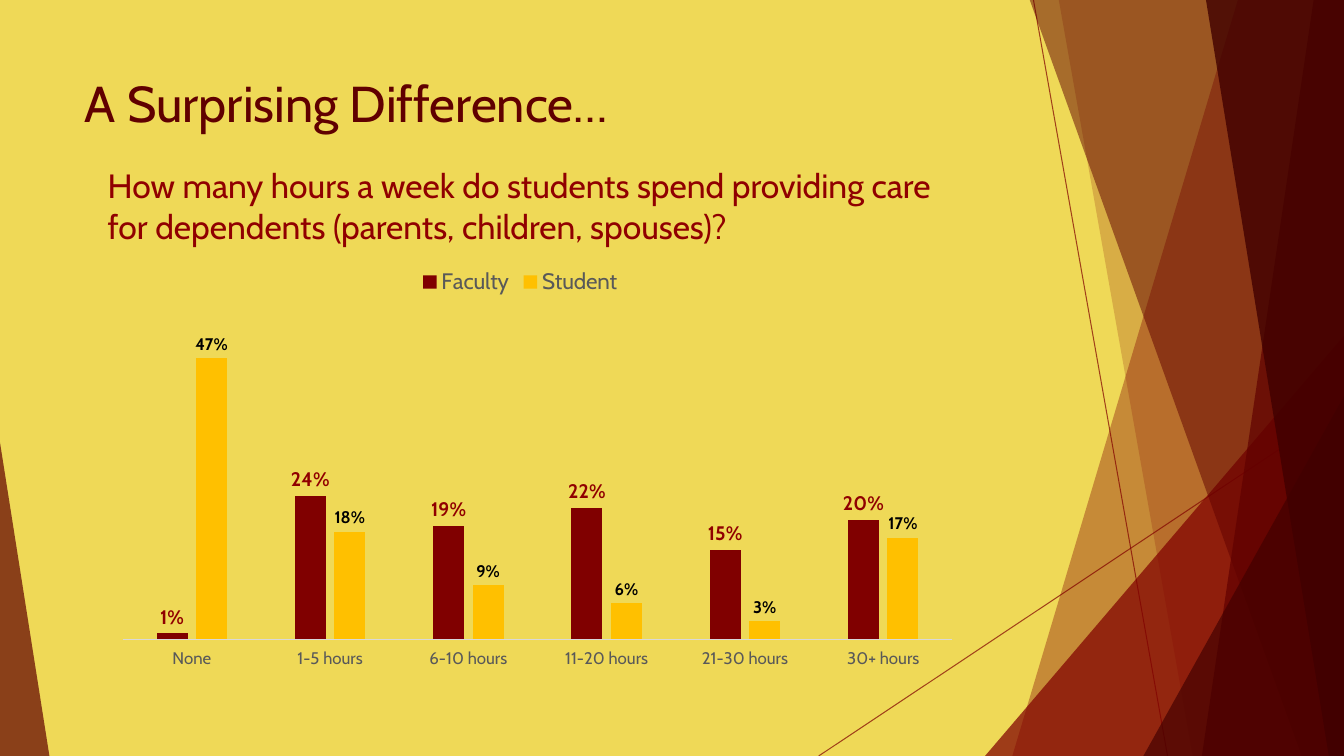
"""Build the slide comparing faculty and student answers on hours of dependent care."""
from dataclasses import dataclass

from lxml.etree import SubElement
from pptx import Presentation
from pptx.chart.data import CategoryChartData
from pptx.dml.color import RGBColor
from pptx.enum.chart import XL_CHART_TYPE as CT, XL_LABEL_POSITION as LABEL
from pptx.enum.chart import XL_LEGEND_POSITION as LEGEND, XL_TICK_LABEL_POSITION as TICK_LABEL
from pptx.enum.chart import XL_TICK_MARK as TICK
from pptx.enum.shapes import MSO_CONNECTOR as CONNECTOR, MSO_SHAPE as SHAPE
from pptx.enum.text import MSO_ANCHOR as ANCHOR, MSO_AUTO_SIZE as AUTO, PP_ALIGN as ALIGN
from pptx.oxml import parse_xml
from pptx.oxml.ns import nsdecls, qn
from pptx.util import Inches, Pt

WIDTH, HEIGHT, TOP = 13.33, 7.5, -0.01
FONT = "Cabin"


@dataclass
class Ray:
    start: tuple[float, float]
    end: tuple[float, float]


@dataclass
class Facet:
    top_x: float
    bottom_x: float
    color: str
    alpha: int


@dataclass
class Corner:
    box: tuple[float, float, float, float]
    apex: float
    color: str
    alpha: int


@dataclass
class Answers:
    name: str
    values: list[float]
    color: str
    label_color: str
    label_size: int


RAYS = [Ray((10.25, 0), (11.58, HEIGHT)), Ray((WIDTH, 4.03), (8.12, HEIGHT))]
PANELS = [
    Facet(12.28, 10.04, "800000", 36),
    Facet(10.5, 11.83, "800000", 20),
    Corner((9.77, 3.33, 3.56, 4.17), 1, "800000", 72),
    Facet(10.21, 12.91, "600000", 50),
    Facet(13.03, 11.92, "600000", 70),
    Facet(11.96, 13.18, "400000", 80),
    Corner((11.34, 3.93, 1.99, 3.57), 1, "400000", 66),
    Corner((0, 4.39, 0.49, 3.11), 0, "600000", 70),
]
HOURS = ["None", "1-5 hours", "6-10 hours", "11-20 hours", "21-30 hours", "30+ hours"]
ANSWERS = [
    Answers("Faculty", [0.01, 0.24, 0.19, 0.22, 0.15, 0.2], "800000", "900000", 14),
    Answers("Student", [0.47, 0.18, 0.09, 0.06, 0.03, 0.17], "FFC000", "000000", 12),
]
PLOT_AREA = {"x": 0.076, "y": 0.172, "w": 0.885, "h": 0.615}


def paint(fmt, color: str, alpha: int = 100) -> None:
    """Give a fill a solid colour with an opacity in percent."""
    fmt.solid()
    fmt.fore_color.rgb = RGBColor.from_string(color)
    if alpha < 100:
        for node in fmt._xPr.iter(qn("a:srgbClr")):
            SubElement(node, qn("a:alpha")).set("val", str(alpha * 1000))


def style_font(font, size: int, color: str, bold: bool = False) -> None:
    """Set the typeface, size, weight and colour of a font."""
    for key, value in {"name": FONT, "size": Pt(size), "bold": bold}.items():
        setattr(font, key, value)
    paint(font.fill, color)


def write(sp, text: str, size: int, color: str, autosize: AUTO) -> None:
    """Put one left-aligned paragraph into a shape."""
    tf = sp.text_frame
    settings = {"word_wrap": True, "auto_size": autosize, "vertical_anchor": ANCHOR.TOP}
    for key, value in settings.items():
        setattr(tf, key, value)
    p = tf.paragraphs[0]
    p.alignment = ALIGN.LEFT
    r = p.add_run()
    r.text = text
    style_font(r.font, size, color)


def draw_ray(s, ray: Ray) -> None:
    """Draw one thin translucent line."""
    points = [Inches(v) for v in (*ray.start, *ray.end)]
    line = s.shapes.add_connector(CONNECTOR.STRAIGHT, *points)
    line.line.width = Pt(0.75)
    paint(line.line.fill, "800000", 70)
    SubElement(line._element.spPr, qn("a:effectLst"))


def draw_panel(s, panel: Facet | Corner) -> None:
    """Draw a triangle, or a facet reaching the right edge of the slide."""
    if isinstance(panel, Corner):
        sp = s.shapes.add_shape(SHAPE.ISOSCELES_TRIANGLE, *map(Inches, panel.box))
        sp.adjustments[0] = panel.apex
    else:
        corners = [(WIDTH, TOP), (WIDTH, HEIGHT), (panel.bottom_x, HEIGHT)]
        builder = s.shapes.build_freeform(Inches(panel.top_x), Inches(TOP))
        builder.add_line_segments([(Inches(x), Inches(y)) for x, y in corners])
        sp = builder.convert_to_shape()
    sp.shadow.inherit = False
    paint(sp.fill, panel.color, panel.alpha)
    sp.line.fill.background()


def fix_plot_area(chart) -> None:
    """Place the inner plot area at set fractions of the chart."""
    area = chart._chartSpace.chart.plotArea
    for old in area.findall(qn("c:layout")):
        area.remove(old)
    modes = '<c:layoutTarget val="inner"/><c:xMode val="edge"/><c:yMode val="edge"/>'
    sizes = "".join(f'<c:{key} val="{value}"/>' for key, value in PLOT_AREA.items())
    layout = f"<c:manualLayout>{modes}{sizes}</c:manualLayout>"
    area.insert(0, parse_xml(f'<c:layout {nsdecls("c")}>{layout}</c:layout>'))


def style_axes(chart) -> None:
    """Show the hours under a thin line and hide the value axis."""
    hours, share = chart.category_axis, chart.value_axis
    hours.major_tick_mark = hours.minor_tick_mark = TICK.NONE
    hours.tick_label_position = TICK_LABEL.LOW
    hours.has_major_gridlines = False
    style_font(hours.tick_labels.font, 12, "595959")
    hours.format.line.width = Pt(0.75)
    paint(hours.format.line.fill, "D9D9D9")
    settings = {"visible": False, "has_major_gridlines": False,
                "minimum_scale": 0, "maximum_scale": 0.5}
    for key, value in settings.items():
        setattr(share, key, value)


def add_answer_chart(s) -> None:
    """Add the clustered columns of hours by group."""
    data = CategoryChartData(number_format="0%")
    data.categories = HOURS
    for group in ANSWERS:
        data.add_series(group.name, group.values)
    box = map(Inches, (0.51, 2.55, 9.3, 4.82))
    chart = s.shapes.add_chart(CT.COLUMN_CLUSTERED, *box, data).chart
    chart.has_title = False
    style_font(chart.font, 10, "000000")
    chart.has_legend = True
    chart.legend.position = LEGEND.TOP
    chart.legend.include_in_layout = False
    style_font(chart.legend.font, 16, "595959")
    style_axes(chart)
    plot = chart.plots[0]
    for key, value in {"gap_width": 219, "overlap": -27, "vary_by_categories": False}.items():
        setattr(plot, key, value)
    for series, group in zip(plot.series, ANSWERS):
        paint(series.format.fill, group.color)
        labels = series.data_labels
        settings = {"show_value": True, "position": LABEL.OUTSIDE_END,
                    "number_format": "0%", "number_format_is_linked": False}
        for key, value in settings.items():
            setattr(labels, key, value)
        style_font(labels.font, group.label_size, group.label_color, True)
    fix_plot_area(chart)


def main() -> None:
    """Assemble and save the slide."""
    prs = Presentation()
    prs.slide_width, prs.slide_height = Inches(WIDTH), Inches(HEIGHT)
    s = prs.slides.add_slide(prs.slide_layouts[5])
    paint(s.background.fill, "EFD957")
    for ray in RAYS:
        draw_ray(s, ray)
    for panel in PANELS:
        draw_panel(s, panel)
    title = s.shapes.title
    for key, value in {"left": 0.74, "top": 0.67, "width": 9.4, "height": 0.93}.items():
        setattr(title, key, Inches(value))
    write(title, "A Surprising Difference…", 36, "600000", AUTO.NONE)
    question = s.shapes.add_textbox(*map(Inches, (0.97, 1.59, 8.54, 0.91)))
    write(question, "How many hours a week do students spend providing care for dependents "
          "(parents, children, spouses)?", 24, "900000", AUTO.SHAPE_TO_FIT_TEXT)
    add_answer_chart(s)
    prs.save("out.pptx")


if __name__ == "__main__":
    main()
